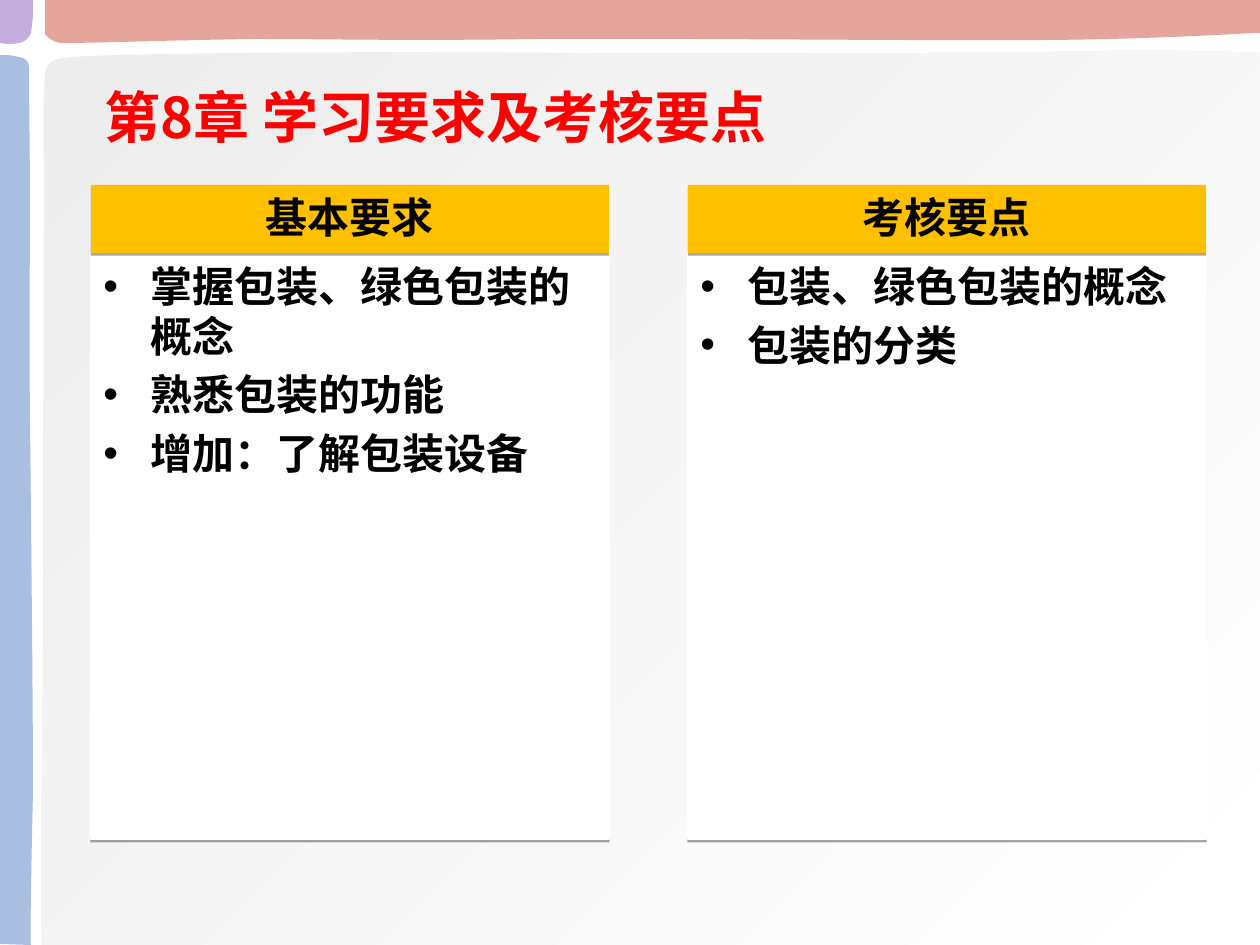
import pptx
import pptx.dml.color
import pptx.enum.shapes
import pptx.enum.text
import pptx.oxml.ns
import pptx.util
from lxml import etree

RGB = pptx.dml.color.RGBColor
RED = RGB(0xFF, 0x00, 0x00)
BLACK = RGB(0x00, 0x00, 0x00)
WHITE = RGB(0xFF, 0xFF, 0xFF)
GREY = RGB(0xE6, 0xE6, 0xE6)
AMBER = RGB(0xFF, 0xC0, 0x00)
CORAL = RGB(0xDA, 0x7F, 0x70)
BLUE = RGB(0x85, 0xA3, 0xD5)
PURPLE = RGB(0xAC, 0x8C, 0xD0)
TITLE_FONT = "Noto Sans CJK JP"
BODY_FONT = "Noto Sans CJK SC"
SCALE = 914400 // 126

PANEL = ([(1260, 945), (1260, 53)], [
    ((1116, 48), (1077, 53), (958, 53)), ((839, 53), (693, 54), (546, 53)),
    ((398, 52), (155, 52), (72, 57)), ((45, 60), (45, 62), (44, 92)),
    ((43, 121), (44, 139), (44, 229)), ((44, 323), (43, 519), (43, 638)),
    ((43, 757), (40, 834), (42, 945)), ((651, 945), (1260, 945), (1260, 945))])
TOP_BAND = ([(1260, 0), (1260, 33)], [
    ((1261, 32), (1169, 39), (1048, 40)), ((927, 41), (669, 38), (537, 39)),
    ((404, 41), (334, 39), (256, 39)), ((176, 40), (97, 43), (62, 43)),
    ((52, 43), (45, 34), (45, 34)), ((45, 34), (45, 18), (45, 0))])
LEFT_BAND = ([(0, 944), (31, 945)], [
    ((30, 946), (31, 879), (33, 791)), ((33, 703), (31, 513), (30, 416)),
    ((29, 320), (30, 267), (30, 210)), ((30, 152), (29, 94), (29, 68)),
    ((29, 60), (23, 58), (23, 58)), ((9, 54), (0, 55), (0, 55))])
CORNER = ([(0, 0), (33, 0)], [
    ((34, 15), (31, 33), (31, 33)), ((29, 39), (24, 42), (19, 43)),
    ((9, 45), (0, 43), (0, 43))])
CARDS = [
    ("基本要求", ["掌握包装、绿色包装的概念", "熟悉包装的功能", "增加：了解包装设备"]),
    ("考核要点", ["包装、绿色包装的概念", "包装的分类"]),
]


def px(n):
    """Turn pixels into EMU."""
    return pptx.util.Emu(n * SCALE)


def add_child(parent, tag, **attrs):
    """Append a DrawingML element with the given attributes."""
    return etree.SubElement(parent, pptx.oxml.ns.qn(tag), **attrs)


def add_run(p, text, size, font, color):
    """Add a bold run with Latin and East Asian typefaces."""
    r = p.add_run()
    r.text = text
    r.font.size = pptx.util.Pt(size)
    r.font.bold = True
    r.font.color.rgb = color
    r.font.name = font
    add_child(r._r.get_or_add_rPr(), "a:ea", typeface=font)


def bend_segments(sp, curves):
    """Turn the last straight segments of a freeform into cubic curves."""
    segments = list(sp.element.spPr.iter(pptx.oxml.ns.qn("a:lnTo")))
    for segment, curve in zip(segments[1:], curves):
        segment.tag = pptx.oxml.ns.qn("a:cubicBezTo")
        for point in list(segment):
            segment.remove(point)
        for x, y in curve:
            add_child(segment, "a:pt", x=str(px(x) - sp.left), y=str(px(y) - sp.top))


def add_outline(s, outline, color=None):
    """Draw a translucent curved shape, with a grey gradient if no colour is given."""
    corners, curves = outline
    points = corners + [curve[-1] for curve in curves]
    builder = s.shapes.build_freeform(*[px(n) for n in points[0]])
    builder.add_line_segments([(px(x), px(y)) for x, y in points[1:]], close=True)
    sp = builder.convert_to_shape()
    bend_segments(sp, curves)
    sp.shadow.inherit = False
    sp.line.fill.background()
    if color is None:
        sp.fill.gradient()
        sp.fill.gradient_angle = 315
        for stop, shade in zip(sp.fill.gradient_stops, (GREY, WHITE)):
            stop.color.rgb = shade
    else:
        sp.fill.solid()
        sp.fill.fore_color.rgb = color
    for node in sp.element.spPr.iter(pptx.oxml.ns.qn("a:srgbClr")):
        add_child(node, "a:alpha", val="70000")


def add_title(s, text, x, y, w, h):
    """Place the title in front of the background shapes."""
    sp = s.shapes.title
    sp.element.getparent().append(sp.element)
    sp.left, sp.top, sp.width, sp.height = px(x), px(y), px(w), px(h)
    tf = sp.text_frame
    tf.word_wrap = True
    tf.vertical_anchor = pptx.enum.text.MSO_ANCHOR.MIDDLE
    p = tf.paragraphs[0]
    p.alignment = pptx.enum.text.PP_ALIGN.LEFT
    add_run(p, text, 32, TITLE_FONT, RED)


def add_box(s, x, y, w, h, fill):
    """Add a rectangle with a crisp shadow below it."""
    sp = s.shapes.add_shape(pptx.enum.shapes.MSO_SHAPE.RECTANGLE, px(x), px(y), px(w), px(h))
    sp.fill.solid()
    sp.fill.fore_color.rgb = fill
    sp.line.fill.background()
    sp.shadow.inherit = False
    effects = sp.element.spPr.find(pptx.oxml.ns.qn("a:effectLst"))
    shadow = add_child(effects, "a:outerShdw", blurRad="0", dist="20320",
                       dir="5400000", algn="t", rotWithShape="0")
    add_child(add_child(shadow, "a:srgbClr", val="000000"), "a:alpha", val="34000")
    tf = sp.text_frame
    tf.word_wrap = True
    tf.vertical_anchor = pptx.enum.text.MSO_ANCHOR.TOP
    tf.margin_top = px(7)
    return sp


def add_card(s, heading, items, x, y, w, h):
    """Add a bulleted body under an amber heading."""
    head_h = 68
    sp = add_box(s, x, y + head_h + 1, w, h - head_h - 1, WHITE)
    sp.line.color.rgb = WHITE
    sp.line.width = pptx.util.Pt(0.75)
    tf = sp.text_frame
    for i, item in enumerate(items):
        p = tf.add_paragraph() if i else tf.paragraphs[0]
        p.alignment = pptx.enum.text.PP_ALIGN.LEFT
        p.line_spacing = pptx.util.Pt(28.5)
        if i:
            p.space_before = pptx.util.Pt(5)
        pPr = p._p.get_or_add_pPr()
        pPr.set("marL", str(px(47)))
        pPr.set("indent", str(px(-47)))
        add_child(add_child(pPr, "a:buClr"), "a:srgbClr", val="000000")
        add_child(pPr, "a:buFont", typeface="Arial")
        add_child(pPr, "a:buChar", char="•")
        add_run(p, item, 24, BODY_FONT, BLACK)
    sp = add_box(s, x, y, w, head_h, AMBER)
    p = sp.text_frame.paragraphs[0]
    p.alignment = pptx.enum.text.PP_ALIGN.CENTER
    p.line_spacing = pptx.util.Pt(28.5)
    add_run(p, heading, 24, BODY_FONT, BLACK)


def main():
    """Build and save the slide."""
    prs = pptx.Presentation()
    prs.slide_width, prs.slide_height = px(1260), px(945)
    s = prs.slides.add_slide(prs.slide_layouts[5])
    s.background.fill.solid()
    s.background.fill.fore_color.rgb = WHITE
    outlines = [(PANEL, None), (TOP_BAND, CORAL), (LEFT_BAND, BLUE), (CORNER, PURPLE)]
    for outline, color in outlines:
        add_outline(s, outline, color)
    add_title(s, "第8章 学习要求及考核要点", 92, 51, 856, 130)
    for i, (heading, items) in enumerate(CARDS):
        add_card(s, heading, items, 91 + i * 597, 185, 518, 654)
    prs.save("out.pptx")


if __name__ == "__main__":
    main()
